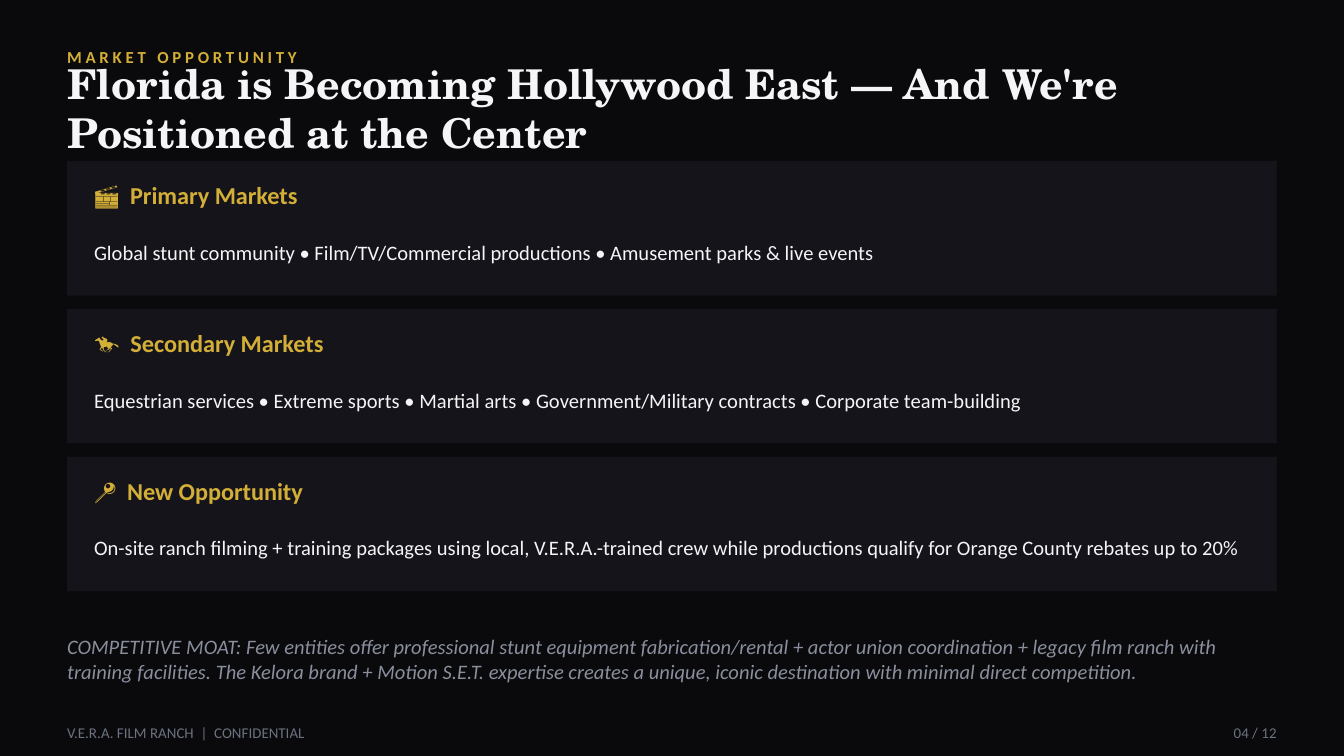
from dataclasses import dataclass

from pptx import Presentation
from pptx.dml.color import RGBColor
from pptx.enum.shapes import MSO_SHAPE
from pptx.enum.text import MSO_ANCHOR, MSO_AUTO_SIZE, PP_ALIGN
from pptx.util import Pt

EMU_PER_PX = 4572
SLIDE_WIDTH, SLIDE_HEIGHT = 2000, 1125
MARGIN = 100
CONTENT_WIDTH = SLIDE_WIDTH - 2 * MARGIN
CARD_TOP, CARD_HEIGHT, CARD_GAP, CARD_PADDING = 240, 200, 20, 40


@dataclass(frozen=True)
class Theme:
    background: str = "0A0A0C"
    card: str = "14141A"
    gold: str = "D4AF37"
    light: str = "F5F5F7"
    muted: str = "8A8F9E"
    dim: str = "6B7280"
    heading_font: str = "TeX Gyre Schola"
    body_font: str = "Calibri"
    title_size: int = 22
    card_title_size: int = 13
    body_size: int = 11
    label_size: int = 9
    footer_size: int = 8


def px(length):
    return length * EMU_PER_PX


def write(frame, text, *, font, size, color, bold=False, italic=False,
          align=PP_ALIGN.LEFT, spacing=0):
    frame.word_wrap = True
    frame.auto_size = MSO_AUTO_SIZE.NONE
    frame.vertical_anchor = MSO_ANCHOR.MIDDLE
    frame.margin_left = frame.margin_right = 0
    frame.margin_top = frame.margin_bottom = 0
    paragraph = frame.paragraphs[0]
    paragraph.alignment = align
    run = paragraph.add_run()
    run.text = text
    run.font.name = font
    run.font.size = Pt(size)
    run.font.bold = bold
    run.font.italic = italic
    run.font.color.rgb = RGBColor.from_string(color)
    if spacing:
        run.font._element.set("spc", str(spacing * 100))


class SlideBuilder:
    def __init__(self, slide, theme):
        self.slide = slide
        self.theme = theme
        fill = slide.background.fill
        fill.solid()
        fill.fore_color.rgb = RGBColor.from_string(theme.background)

    def title(self, text, left, top, width, height):
        heading = self.slide.shapes.title
        heading.left, heading.top = px(left), px(top)
        heading.width, heading.height = px(width), px(height)
        write(heading.text_frame, text, font=self.theme.heading_font,
              size=self.theme.title_size, color=self.theme.light, bold=True)

    def text(self, text, left, top, width, height, **style):
        box = self.slide.shapes.add_textbox(px(left), px(top), px(width), px(height))
        write(box.text_frame, text, font=self.theme.body_font, **style)

    def panel(self, left, top, width, height):
        panel = self.slide.shapes.add_shape(
            MSO_SHAPE.RECTANGLE, px(left), px(top), px(width), px(height))
        panel.shadow.inherit = False
        panel.fill.solid()
        panel.fill.fore_color.rgb = RGBColor.from_string(self.theme.card)
        panel.line.fill.background()

    def card(self, heading, details, top):
        left = MARGIN + CARD_PADDING
        width = CONTENT_WIDTH - 2 * CARD_PADDING
        self.panel(MARGIN, top, CONTENT_WIDTH, CARD_HEIGHT)
        self.text(heading, left, top + 20, width, 60, bold=True,
                  size=self.theme.card_title_size, color=self.theme.gold)
        self.text(details, left, top + 90, width, 90,
                  size=self.theme.body_size, color=self.theme.light)


def main():
    presentation = Presentation()
    presentation.slide_width = px(SLIDE_WIDTH)
    presentation.slide_height = px(SLIDE_HEIGHT)
    theme = Theme()
    title_only = presentation.slide_layouts[5]
    builder = SlideBuilder(presentation.slides.add_slide(title_only), theme)

    builder.text("MARKET OPPORTUNITY", MARGIN, 60, CONTENT_WIDTH, 50,
                 size=theme.label_size, color=theme.gold, bold=True, spacing=2)
    builder.title("Florida is Becoming Hollywood East — And We're Positioned at the Center",
                  MARGIN, 110, CONTENT_WIDTH, 100)

    markets = [
        ("🎬  Primary Markets",
         "Global stunt community • Film/TV/Commercial productions • "
         "Amusement parks & live events"),
        ("🏇  Secondary Markets",
         "Equestrian services • Extreme sports • Martial arts • "
         "Government/Military contracts • Corporate team-building"),
        ("📍  New Opportunity",
         "On-site ranch filming + training packages using local, V.E.R.A.-trained crew "
         "while productions qualify for Orange County rebates up to 20%"),
    ]
    for index, (market, details) in enumerate(markets):
        builder.card(market, details, CARD_TOP + index * (CARD_HEIGHT + CARD_GAP))

    builder.text(
        "COMPETITIVE MOAT: Few entities offer professional stunt equipment "
        "fabrication/rental + actor union coordination + legacy film ranch with training "
        "facilities. The Kelora brand + Motion S.E.T. expertise creates a unique, "
        "iconic destination with minimal direct competition.",
        MARGIN, 920, CONTENT_WIDTH, 120,
        size=theme.body_size, color=theme.muted, italic=True)

    footer = {"size": theme.footer_size, "color": theme.dim}
    builder.text("V.E.R.A. FILM RANCH  |  CONFIDENTIAL", MARGIN, 1070, 1200, 40, **footer)
    builder.text("04 / 12", 1700, 1070, 200, 40, align=PP_ALIGN.RIGHT, **footer)

    presentation.save("out.pptx")


if __name__ == "__main__":
    main()
